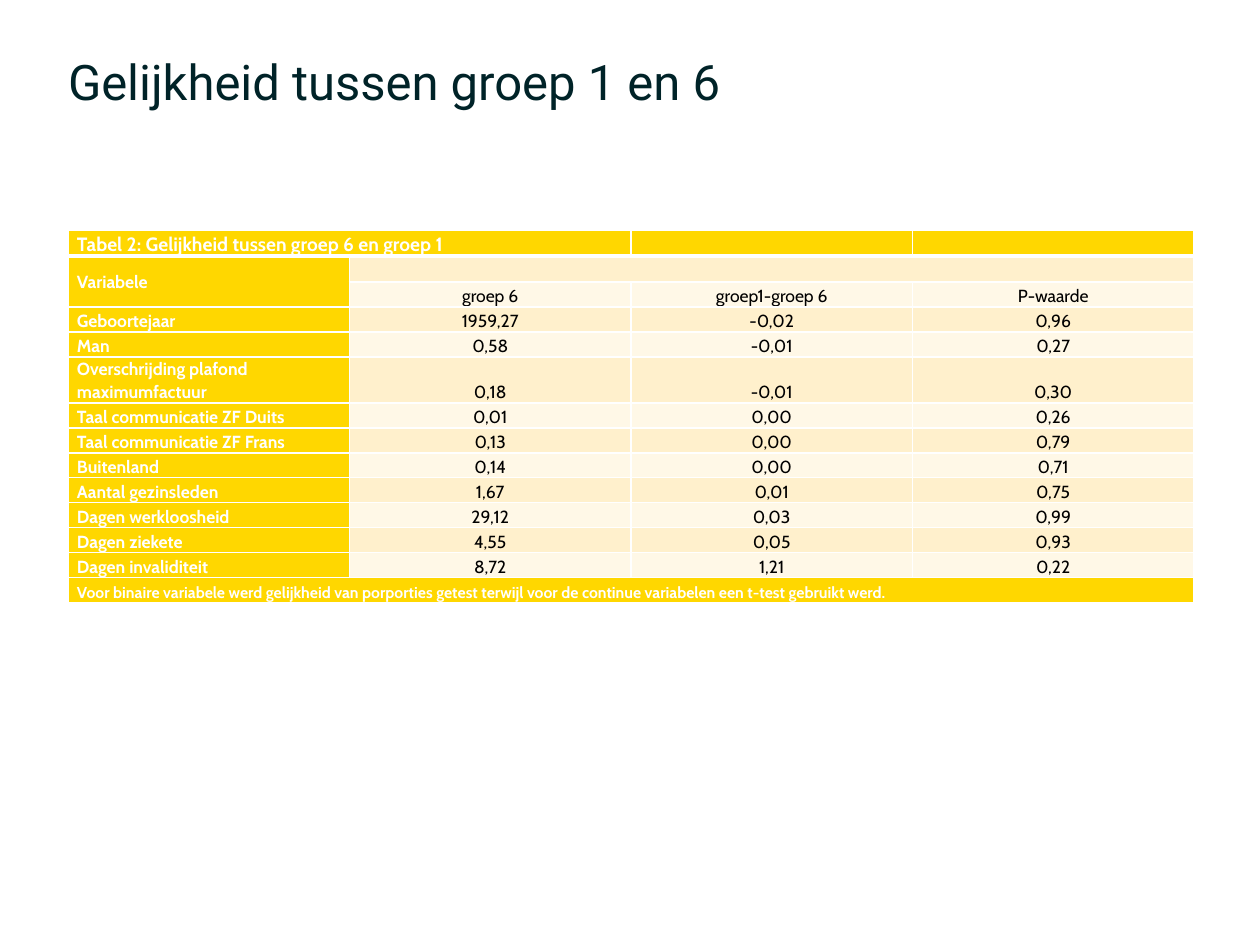
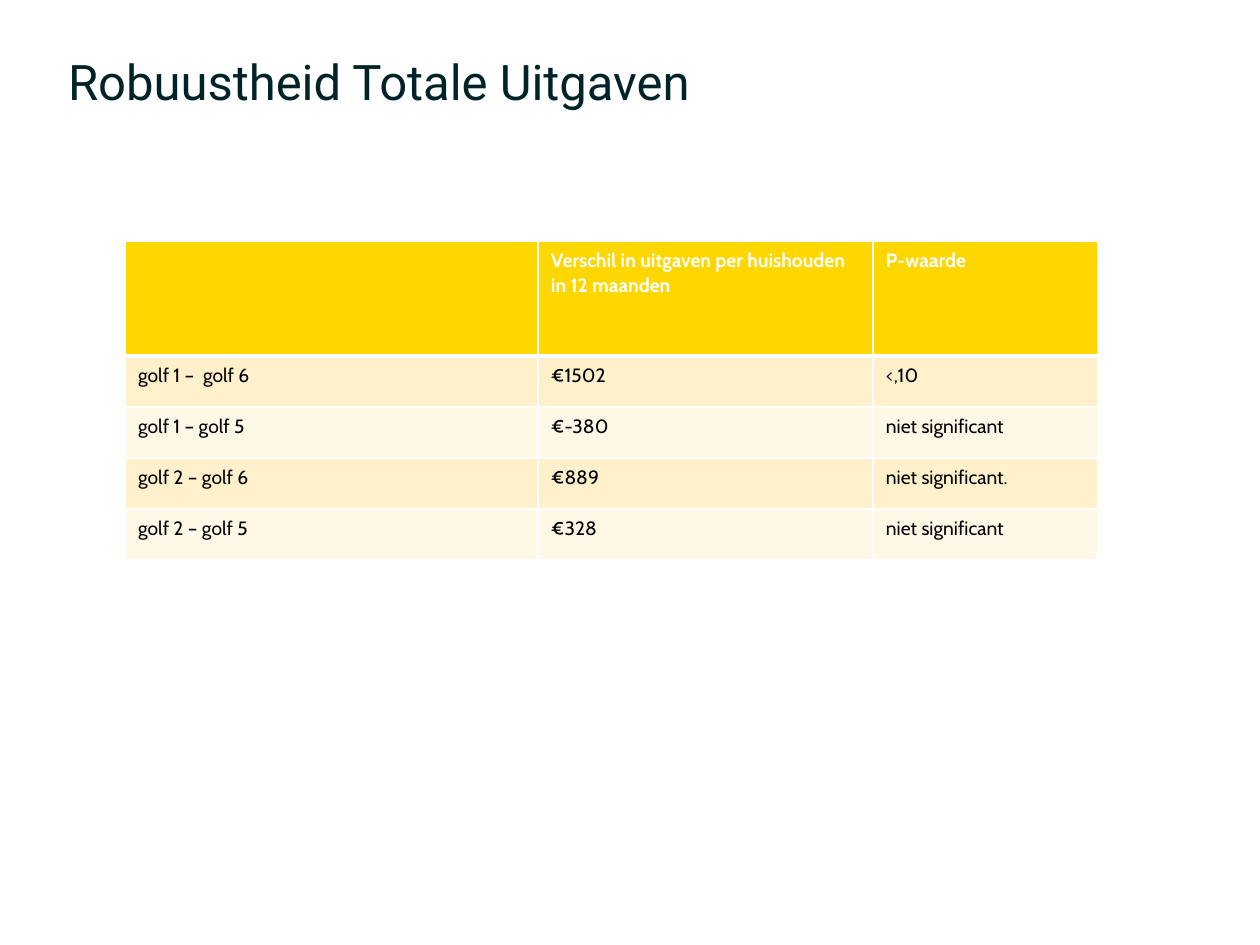
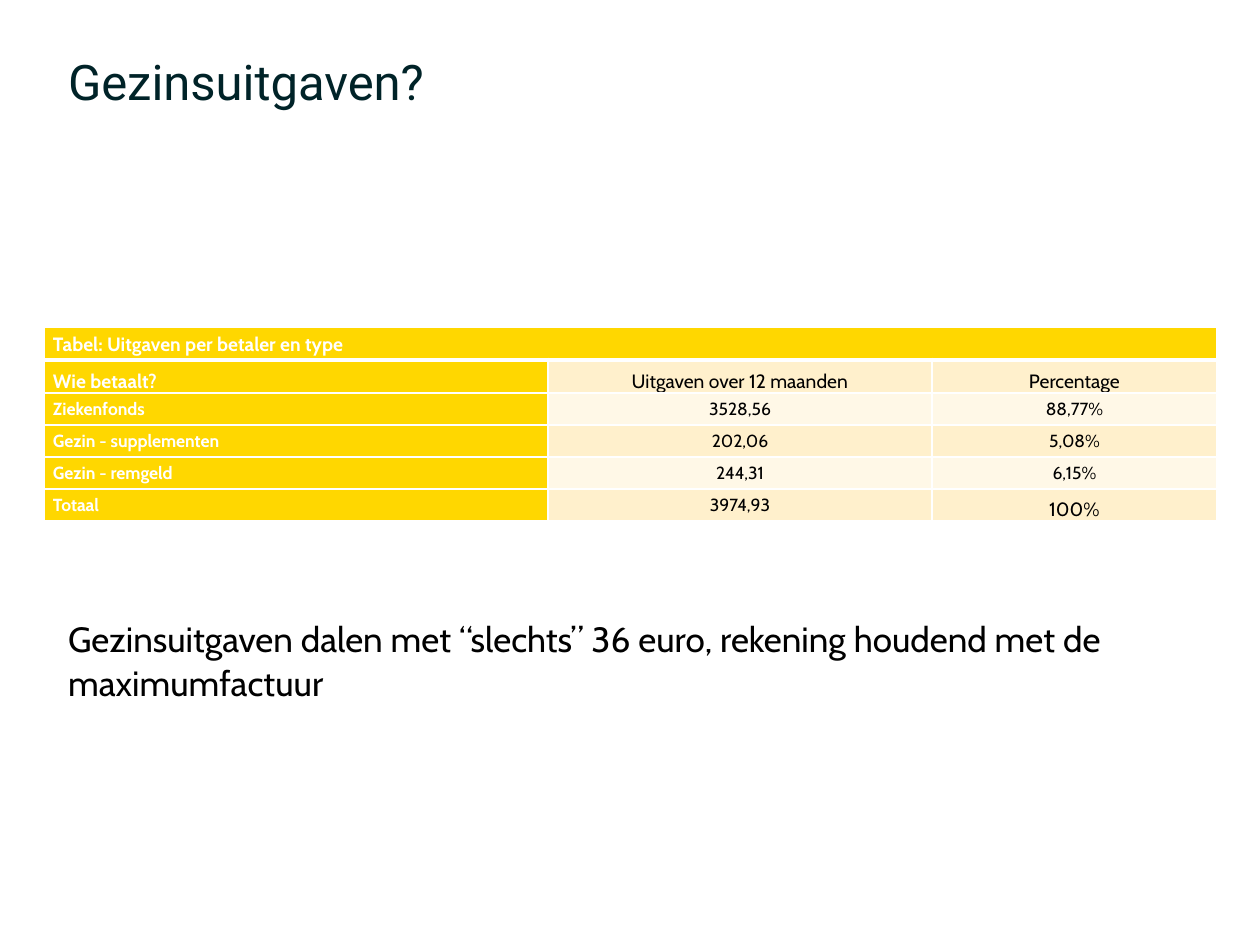
from lxml import etree
from pptx import Presentation
from pptx.dml.color import RGBColor
from pptx.enum.text import MSO_ANCHOR, MSO_AUTO_SIZE, PP_ALIGN
from pptx.oxml.ns import qn
from pptx.util import Emu, Pt

LEFT, CENTER = PP_ALIGN.LEFT, PP_ALIGN.CENTER
TOP, MIDDLE, BOTTOM = MSO_ANCHOR.TOP, MSO_ANCHOR.MIDDLE, MSO_ANCHOR.BOTTOM
NO_FIT = MSO_AUTO_SIZE.NONE

# Shared look
PX_PER_INCH = 126
TITLE_FONT, BODY_FONT = "Roboto", "Cabin"
INK, BLACK, WHITE = "002328", "000000", "FFFFFF"
GOLD, BAND_DARK, BAND_LIGHT = "FFD700", "FFF0CC", "FFF8E7"
TITLE_BOX = (68, 54, 1126, 115)
TITLE_ONLY, TITLE_AND_BODY = 5, 1

# Cell formats: compact tables and the roomy one
COMPACT = {"size": 10, "anchor": BOTTOM, "align": CENTER, "after": 0,
           "margins": (9, 0, 9, 0)}
ROOMY = {"size": 11, "anchor": TOP, "align": LEFT, "after": 8,
         "margins": (13, 6, 13, 6)}

EQUALITY_ROWS = [
    ["Tabel 2: Gelijkheid tussen groep 6 en groep 1", "", "", ""],
    ["Variabele", "", "", ""],
    ["", "groep 6", "groep1-groep 6", "P-waarde"],
    ["Geboortejaar", "1959,27", "-0,02", "0,96"],
    ["Man", "0,58", "-0,01", "0,27"],
    ["Overschrijding plafond maximumfactuur", "0,18", "-0,01", "0,30"],
    ["Taal communicatie ZF Duits", "0,01", "0,00", "0,26"],
    ["Taal communicatie ZF Frans", "0,13", "0,00", "0,79"],
    ["Buitenland", "0,14", "0,00", "0,71"],
    ["Aantal gezinsleden", "1,67", "0,01", "0,75"],
    ["Dagen werkloosheid", "29,12", "0,03", "0,99"],
    ["Dagen ziekete", "4,55", "0,05", "0,93"],
    ["Dagen invaliditeit", "8,72", "1,21", "0,22"],
    ["Voor binaire variabele werd gelijkheid van porporties getest terwijl "
     "voor de continue variabelen een t-test gebruikt werd.", "", "", ""],
]
ROBUSTNESS_ROWS = [
    ["", "Verschil in uitgaven per huishouden in 12 maanden", "P-waarde"],
    ["golf 1 –  golf 6", "€1502", "<,10"],
    ["golf 1 – golf 5", "€-380", "niet significant"],
    ["golf 2 – golf 6", "€889", "niet significant."],
    ["golf 2 – golf 5", "€328", "niet significant"],
]
PAYER_ROWS = [
    ["Tabel: Uitgaven per betaler en type", "", ""],
    ["Wie betaalt?", "Uitgaven over 12 maanden", "Percentage"],
    ["Ziekenfonds", "3528,56", "88,77%"],
    ["Gezin - supplementen", "202,06", "5,08%"],
    ["Gezin - remgeld", "244,31", "6,15%"],
    ["Totaal", "3974,93", "100%"],
]


def px(n):
    return Emu(round(n * 914400 / PX_PER_INCH))


def color(value):
    return RGBColor.from_string(value)


def style_font(font, name, size, ink, bold=False):
    for key, value in {"name": name, "size": Pt(size), "bold": bold}.items():
        setattr(font, key, value)
    font.color.rgb = color(ink)


def fill_placeholder(sp, box, text, font, size, ink, spacing):
    for key, value in zip(("left", "top", "width", "height"), box):
        setattr(sp, key, px(value))
    tf = sp.text_frame
    frame = {"margin_left": 0, "margin_top": 0, "margin_right": 0,
             "margin_bottom": 0, "vertical_anchor": TOP, "word_wrap": True,
             "auto_size": NO_FIT}
    for key, value in frame.items():
        setattr(tf, key, value)
    p = tf.paragraphs[0]
    p_pr = p._p.get_or_add_pPr()
    p_pr.set("marL", "0")
    p_pr.set("indent", "0")
    etree.SubElement(p_pr, qn("a:buNone"))
    paragraph = {"alignment": LEFT, "line_spacing": Pt(spacing),
                 "space_before": Pt(0)}
    for key, value in paragraph.items():
        setattr(p, key, value)
    r = p.add_run()
    r.text = text
    style_font(r.font, font, size, ink)


def add_slide(prs, layout, title):
    s = prs.slides.add_slide(prs.slide_layouts[layout])
    fill_placeholder(s.shapes.title, TITLE_BOX, title, TITLE_FONT, 28, INK, 32)
    return s


def add_borders(cell, top, bottom):
    tc_pr = cell._tc.get_or_add_tcPr()
    widths = {"lnL": 1, "lnR": 1, "lnT": top, "lnB": bottom}
    for i, (side, width) in enumerate(widths.items()):
        ln = etree.Element(qn("a:" + side), w=str(Pt(width)))
        fill = etree.SubElement(ln, qn("a:solidFill"))
        etree.SubElement(fill, qn("a:srgbClr"), val=WHITE)
        tc_pr.insert(i, ln)


def write_cell(cell, text, fmt, gold):
    cell.fill.solid()
    cell.fill.fore_color.rgb = color(fmt["fill"])
    cell.vertical_anchor = fmt["anchor"]
    for side, margin in zip(("left", "top", "right", "bottom"), fmt["margins"]):
        setattr(cell, "margin_" + side, px(margin))
    p = cell.text_frame.paragraphs[0]
    p.alignment, p.line_spacing = fmt["align"], 1.07
    p.space_after = Pt(fmt["after"])
    if text:
        r = p.add_run()
        r.text = text
        style_font(r.font, BODY_FONT, fmt["size"], WHITE if gold else BLACK, gold)
    else:
        etree.SubElement(p._p, qn("a:endParaRPr"), sz=str(fmt["size"] * 100))


def add_grid(s, left, top, cols, heights, rows, base, special=None, spans=(),
             gold_column=True, gold_rows=(0,)):
    """Special formats are keyed by (row, column); spans are cell corners."""
    frame = s.shapes.add_table(len(rows), len(cols), px(left), px(top),
                               px(sum(cols)), px(sum(heights)))
    table = frame.table
    table.first_row = table.horz_banding = False
    for col, width in zip(table.columns, cols):
        col.width = px(width)
    for row, height in zip(table.rows, heights):
        row.height = px(height)
    for i, texts in enumerate(rows):
        for j, text in enumerate(texts):
            gold = i in gold_rows or (gold_column and j == 0)
            band = BAND_DARK if i % 2 else BAND_LIGHT
            fmt = {**base, "fill": GOLD if gold else band}
            if gold:
                fmt["align"] = LEFT
            fmt.update((special or {}).get((i, j), {}))
            cell = table.cell(i, j)
            write_cell(cell, text, fmt, gold)
            add_borders(cell, 3 if i == 1 else 1, 3 if i == 0 else 1)
    for first, last in spans:
        table.cell(*first).merge(table.cell(*last))


def main():
    prs = Presentation()
    prs.slide_width, prs.slide_height = px(1260), px(945)

    # Equality between groups
    s = add_slide(prs, TITLE_ONLY, "Gelijkheid tussen groep 1 en 6")
    last = len(EQUALITY_ROWS) - 1
    add_grid(s, 68, 230, [281.5] * 4, [26, 26] + [25] * 3 + [46] + [25] * 8,
             EQUALITY_ROWS, COMPACT,
             special={(0, 0): {"size": 11}, (1, 0): {"anchor": MIDDLE},
                      (last, 0): {"size": 9}},
             spans=[((0, 0), (0, 1)), ((1, 0), (2, 0)), ((1, 1), (1, 3)),
                    ((last, 0), (last, 3))],
             gold_rows=(0, last))

    # Robustness of total spending
    s = add_slide(prs, TITLE_ONLY, "Robuustheid Totale Uitgaven")
    add_grid(s, 125, 241, [413, 335, 225], [115] + [51] * 4,
             ROBUSTNESS_ROWS, ROOMY, gold_column=False)

    # Household spending by payer
    s = add_slide(prs, TITLE_AND_BODY, "Gezinsuitgaven?")
    large = {"size": 11}
    special = {(1, j): {**large, "anchor": BOTTOM} for j in range(3)}
    special.update({(0, 0): large, (5, 2): {**large, "anchor": BOTTOM}})
    add_grid(s, 44, 327, [504, 384, 285], [33] * 2 + [32] * 4,
             PAYER_ROWS, {**COMPACT, "anchor": MIDDLE}, special=special,
             spans=[((0, 0), (0, 2))])
    fill_placeholder(s.placeholders[1], (68, 616, 1126, 208),
                     "Gezinsuitgaven dalen met “slechts” 36 euro, rekening "
                     "houdend met de maximumfactuur", BODY_FONT, 20, BLACK, 25)

    prs.save("out.pptx")


if __name__ == "__main__":
    main()
